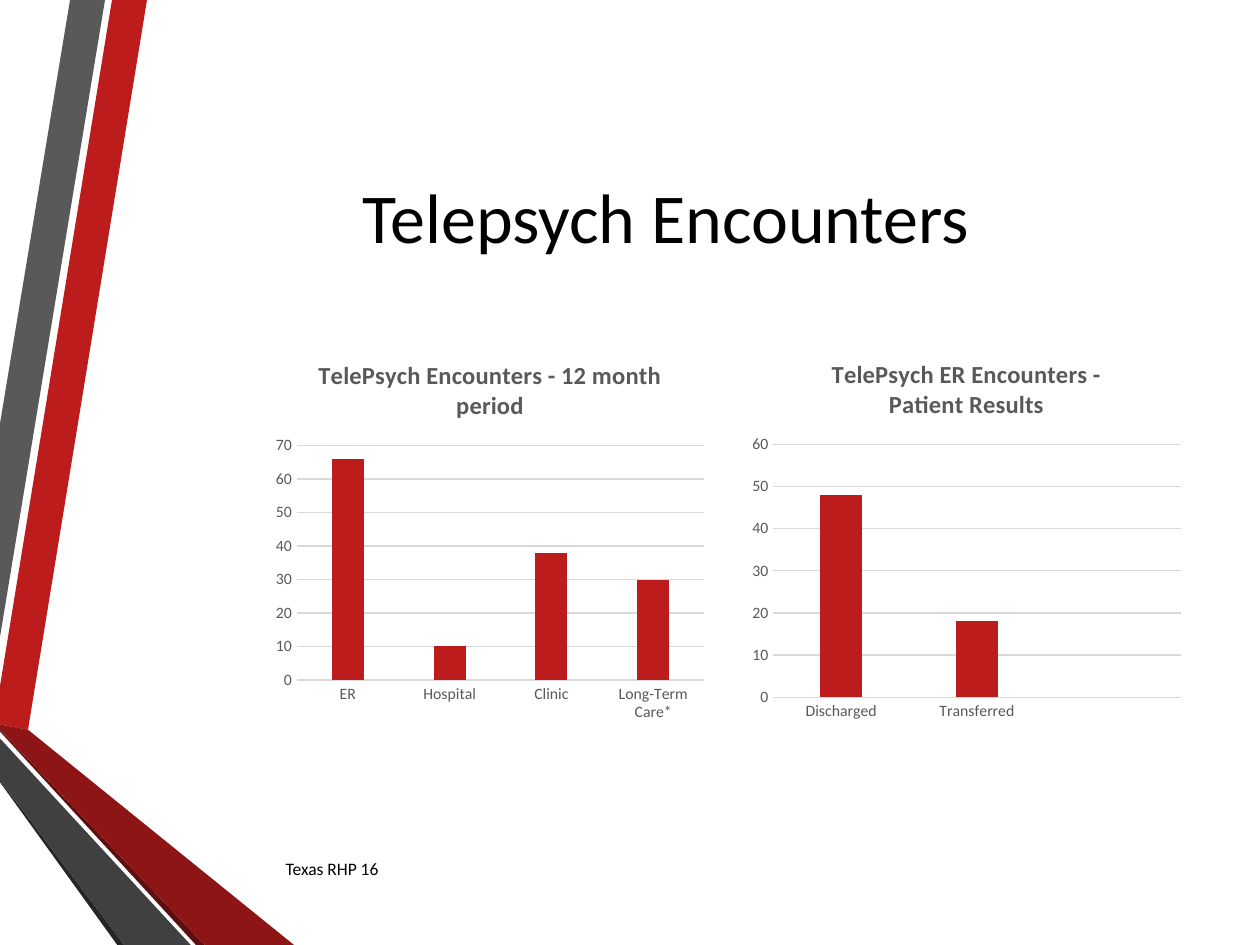
from lxml import etree
from pptx import Presentation
from pptx.chart.data import CategoryChartData
from pptx.dml.color import RGBColor
from pptx.enum import chart as ch, text
from pptx.util import Pt

FONT = "Calibri"
COLORS = {
    "red": "BC1C1C", "dark red": "8D1515", "deep red": "5E0E0E",
    "gray": "595959", "dark gray": "404040", "deep gray": "262626",
    "grid": "D9D9D9", "black": "000000",
}
HEADING = "Telepsych Encounters"
FOOTER = "Texas RHP 16"
RIBBONS = [
    ("red", [(0, 391.7), (0, 414), (15.8, 416.9), (84.2, 0), (64.1, 0)]),
    ("gray", [(59.8, 0), (39.6, 0), (0, 241.9), (0, 364.3)]),
    ("deep gray", [(0, 445.7), (0, 447.1), (67, 540), (71.3, 540)]),
    ("deep red", [(0, 416.9), (0, 417.6), (112.3, 540), (117.4, 540)]),
    ("dark red", [(0, 416.9), (117.4, 540), (167.8, 540), (15.8, 416.9), (0, 414)]),
    ("dark gray", [(0, 445.7), (71.3, 540), (108.7, 540), (0, 421.9)]),
]
CHARTS = [
    ("TelePsych Encounters - 12 month period", (152.6, 193.7),
     [("ER", 66), ("Hospital", 10), ("Clinic", 38), ("Long-Term Care*", 30)], 70),
    ("TelePsych ER Encounters - Patient Results", (424.8, 193),
     [("Discharged", 48), ("Transferred", 18), ("", None)], 60),
]
CHART_SIZE = (254.9, 223.2)


def rgb(name):
    """Return the named colour."""
    return RGBColor.from_string(COLORS[name])


def style_font(font, size, color, bold=False):
    """Set face, size, colour and weight of a font."""
    font.name, font.size, font.bold = FONT, Pt(size), bold
    font.color.rgb = rgb(color)


def style_line(line):
    """Give a chart line the thin grid look."""
    line.color.rgb = rgb("grid")
    line.width = Pt(0.75)


def fill_text(frame, wording, size, align):
    """Write one middle-anchored paragraph."""
    frame.text = wording
    frame.word_wrap = True
    frame.vertical_anchor = text.MSO_ANCHOR.MIDDLE
    frame.paragraphs[0].alignment = align
    style_font(frame.paragraphs[0].runs[0].font, size, "black")


def add_ribbon(slide, color, points):
    """Draw one band of the side decoration."""
    builder = slide.shapes.build_freeform(*points[0], scale=Pt(1))
    builder.add_line_segments(points[1:], close=True)
    ribbon = builder.convert_to_shape()
    ribbon.shadow.inherit = False
    ribbon.fill.solid()
    ribbon.fill.fore_color.rgb = rgb(color)
    ribbon.line.fill.background()


def add_encounters(slide, heading, corner, counts, top):
    """Add one column chart of encounters."""
    data = CategoryChartData()
    data.categories = [label for label, _ in counts]
    data.add_series("Series 1", [count for _, count in counts])
    chart = slide.shapes.add_chart(
        ch.XL_CHART_TYPE.COLUMN_CLUSTERED, *map(Pt, corner + CHART_SIZE), data).chart
    style_font(chart.font, 10, "black")
    chart.has_legend = False
    chart.has_title = True
    chart.chart_title.include_in_layout = False
    title = chart.chart_title.text_frame
    title.text = heading
    style_font(title.paragraphs[0].runs[0].font, 14, "gray", True)

    plot = chart.plots[0]
    plot.gap_width, plot.overlap, plot.vary_by_categories = 219, -27, False
    columns = plot.series[0].format.fill
    columns.solid()
    columns.fore_color.rgb = rgb("red")

    for axis in (chart.category_axis, chart.value_axis):
        axis.major_tick_mark = axis.minor_tick_mark = ch.XL_TICK_MARK.NONE
        style_font(axis.tick_labels.font, 9, "gray")
    style_line(chart.category_axis.format.line)
    values = chart.value_axis
    values.minimum_scale, values.maximum_scale, values.major_unit = 0, top, 10
    values.format.line.fill.background()
    values.has_major_gridlines = True
    style_line(values.major_gridlines.format.line)


def main():
    """Build and save the slide."""
    deck = Presentation()
    deck.slide_width, deck.slide_height = Pt(720), Pt(540)
    slide = deck.slides.add_slide(deck.slide_layouts[5])
    for color, points in RIBBONS:
        add_ribbon(slide, color, points)
    title = slide.shapes.title
    title.left, title.top, title.width, title.height = map(Pt, (77, 54, 607, 138.2))
    fill_text(title.text_frame, HEADING, 40, text.PP_ALIGN.CENTER)
    footer = slide.shapes.add_textbox(*map(Pt, (156.2, 481.7, 418.3, 28.8)))
    fill_text(footer.text_frame, FOOTER, 10, text.PP_ALIGN.LEFT)
    for chart in CHARTS:
        add_encounters(slide, *chart)
    deck.save("out.pptx")


if __name__ == "__main__":
    main()
